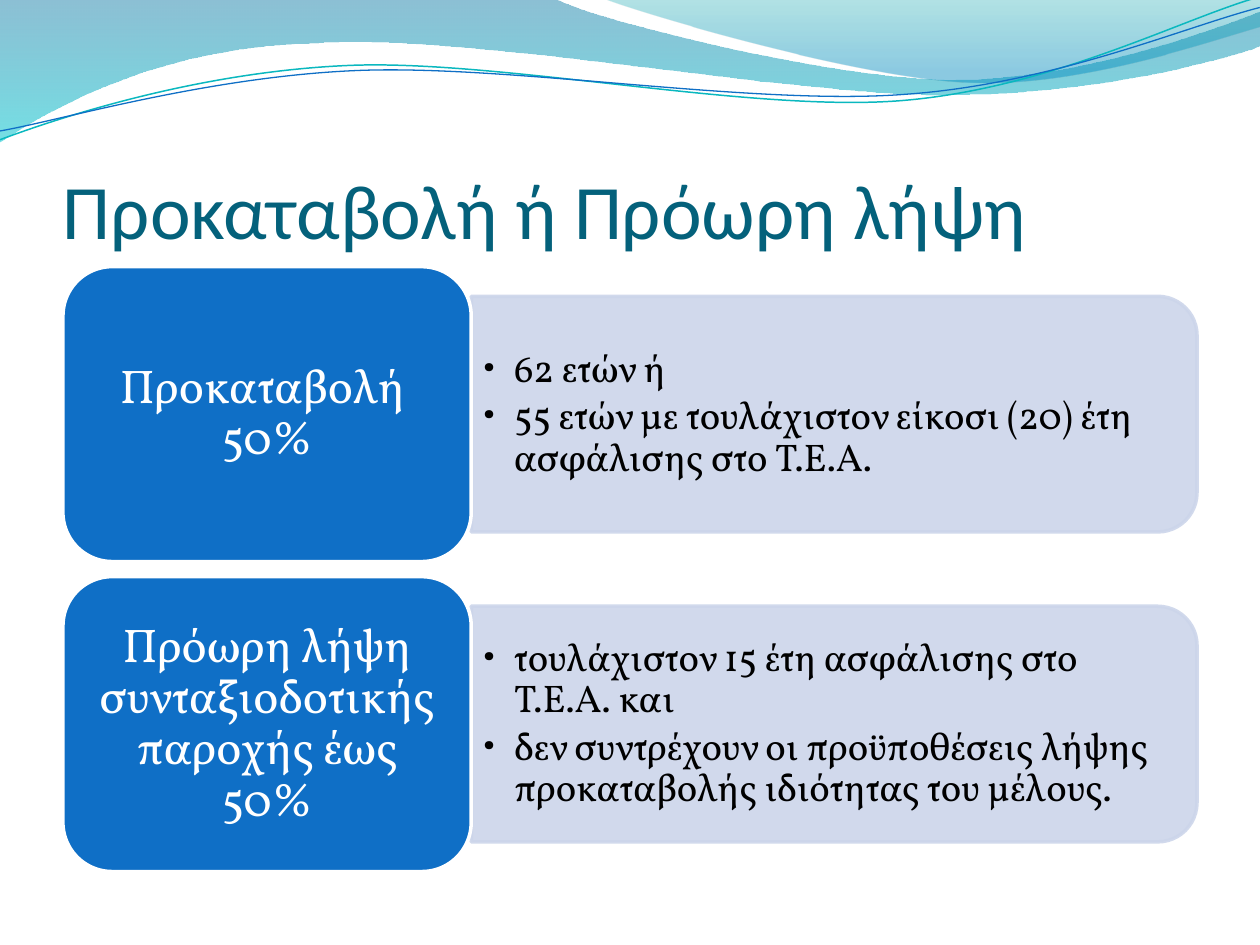
import math
import pptx
import pptx.util
import pptx.dml.color
import pptx.enum.shapes
import pptx.enum.text
import pptx.oxml
import pptx.oxml.ns
import lxml.etree

COLS, ROWS = 100, 75
CELL = pptx.util.Inches(0.1)
RGB = pptx.dml.color.RGBColor
SHAPE = pptx.enum.shapes.MSO_SHAPE
ALIGN = pptx.enum.text.PP_ALIGN
ANCHOR = pptx.enum.text.MSO_ANCHOR

BLUE = RGB(0x0F, 0x6F, 0xC6)
PALE = RGB(0xCC, 0xD5, 0xEA)
INK = RGB(0x04, 0x61, 0x7B)
TEAL = RGB(0x0A, 0xB8, 0xBF)
DEEP = RGB(0x00, 0x74, 0xA1)
AQUA = RGB(0x00, 0xC6, 0xCF)
SEA = RGB(0x00, 0xA1, 0xA9)
SKY = RGB(0x00, 0x8B, 0xBF)
WHITE = RGB(0xFF, 0xFF, 0xFF)
BLACK = RGB(0, 0, 0)

LEFT, TOP, WIDE, TALL = 5, 21.17, 32.4, 23.4
STEP = 24.6
BAND, DEPTH = 57.6, 18.7
TILT = 2.7

WAVE = [[(0, 0)], [(44, -0.1)],
        [(47.6, 1.7), (66.4, 6.3), (75.8, 6.3)],
        [(85.3, 6.3), (95.8, 2.6), (100, 0.9)], [(100.1, 3.6)],
        [(98.3, 4.4), (87, 7.6), (74.6, 7.5)],
        [(62.2, 7.5), (38.2, 2.8), (25.7, 3.4)],
        [(12.9, 3.6), (4.6, 8.3), (-0.1, 11.3)], [(0, 0)]]
CREST = [[(47.9, -0.1)],
         [(50.9, 1.1), (68.2, 6.2), (76.9, 6.5)],
         [(85.6, 6.9), (96.1, 3.2), (100, 2.1)],
         [(100, 0)], [(47.9, -0.1)]]
UPPER = [[(0, 11.1)],
         [(4.8, 9.3), (15.8, 5.7), (27.7, 5.2)],
         [(39.5, 4.7), (59.3, 8.9), (71.3, 8)],
         [(83.3, 7.1), (93.8, 1.5), (99.8, -0.2)]]
LOWER = [[(0, 10.4)],
         [(4.7, 9.6), (16.4, 6.1), (28.3, 5.6)],
         [(40.3, 5.1), (59.7, 8.4), (71.7, 7.5)],
         [(83.6, 6.7), (94.1, 2.1), (100, 0.6)]]

PAIRS = [
    ("Προκαταβολή  50%",
     ["62 ετών ή",
      "55 ετών με τουλάχιστον είκοσι (20) έτη ασφάλισης στο Τ.Ε.Α."]),
    ("Πρόωρη λήψη συνταξιοδοτικής παροχής έως 50%",
     ["τουλάχιστον 15 έτη ασφάλισης στο Τ.Ε.Α. και",
      "δεν συντρέχουν οι προϋποθέσεις λήψης προκαταβολής ιδιότητας του μέλους."]),
]


def cells(*nums):
    return [round(n * CELL) for n in nums]


def add_mark(node, name, **vals):
    mark = lxml.etree.SubElement(node, pptx.oxml.ns.qn(name))
    for key, val in vals.items():
        mark.set(key, str(val))


def bend(shape, curve):
    qn = pptx.oxml.ns.qn
    lines = list(shape._element.iter(qn("a:lnTo")))
    for step in curve[1:]:
        group, lines = lines[:len(step)], lines[len(step):]
        if len(step) == 3:
            arc = lxml.etree.Element(qn("a:cubicBezTo"))
            group[0].addprevious(arc)
            for line in group:
                arc.append(line[0])
                line.getparent().remove(line)


def draw(slide, curve, close):
    dots = [(x * 100, y * 100) for step in curve for x, y in step]
    pen = slide.shapes.build_freeform(*dots[0], scale=CELL / 100)
    pen.add_line_segments(dots[1:], close=close)
    shape = pen.convert_to_shape()
    shape.shadow.inherit = False
    bend(shape, curve)
    return shape


def turn(curve):
    dots = [dot for step in curve for dot in step]
    midx, midy = [(min(side) + max(side)) / 2 for side in zip(*dots)]
    cos, sin = math.cos(math.radians(TILT)), math.sin(math.radians(TILT))
    return [[(midx + (x - midx) * cos - (y - midy) * sin,
              midy + (x - midx) * sin + (y - midy) * cos) for x, y in step]
            for step in curve]


def fade(shape, *shares):
    tints = shape._element.spPr.iter(pptx.oxml.ns.qn("a:srgbClr"))
    for tint, share in zip(tints, shares):
        add_mark(tint, "a:alpha", val=share * 1000)


def add_wave(slide, curve, stops):
    shape = draw(slide, curve, True)
    shape.line.fill.background()
    shape.fill.gradient()
    shape.fill.gradient_angle = 270
    for stop, (place, tint, share) in zip(shape.fill.gradient_stops, stops):
        stop.position = place
        stop.color.rgb = tint
    fade(shape, *[share for place, tint, share in stops])


def add_curve(slide, curve, tint, width):
    shape = draw(slide, turn(curve), False)
    shape.rotation = 360 - TILT
    shape.fill.background()
    shape.line.color.rgb = tint
    shape.line.width = pptx.util.Pt(width)


def add_shape(slide, kind, area, tint, edge):
    shape = slide.shapes.add_shape(kind, *cells(*area))
    shape.shadow.inherit = False
    shape.fill.solid()
    shape.fill.fore_color.rgb = tint
    shape.line.color.rgb = edge
    shape.line.width = pptx.util.Pt(2)
    return shape


def set_frame(frame, anchor, pads):
    frame.word_wrap = True
    frame.vertical_anchor = anchor
    (frame.margin_left, frame.margin_top,
     frame.margin_right, frame.margin_bottom) = cells(*pads)


def set_font(font, size, name, tint):
    font.size = pptx.util.Pt(size)
    font.name = name
    font.color.rgb = tint


def add_run(para, text, *style):
    run = para.add_run()
    run.text = text
    set_font(run.font, *style)


def add_title(slide, text):
    frame = slide.shapes.add_textbox(*cells(LEFT, 7.7, 90, 12.5)).text_frame
    set_frame(frame, ANCHOR.BOTTOM, (0, 0.5, 0, 0))
    add_run(frame.paragraphs[0], text, 44, "Calibri", INK)


def add_band(slide, mid):
    area = (LEFT + WIDE + (BAND - DEPTH) / 2, mid - BAND / 2, DEPTH, BAND)
    shape = add_shape(slide, SHAPE.ROUND_2_SAME_RECTANGLE, area, PALE, PALE)
    shape.rotation = 90
    fade(shape, 90, 90)


def add_list(slide, mid, items):
    area = (LEFT + WIDE, mid - 8.45, 56.7, 16.9)
    style = (22, "Vollkorn", BLACK)
    frame = slide.shapes.add_textbox(*cells(*area)).text_frame
    set_frame(frame, ANCHOR.MIDDLE, (0.9, 0.5, 0.9, 0.5))
    for i, item in enumerate(items):
        para = frame.add_paragraph() if i else frame.paragraphs[0]
        para.level = 1
        para.line_spacing = 0.9
        para.space_after = pptx.util.Pt(3.4)
        props = para._p.get_or_add_pPr()
        indent, = cells(2.5)
        props.set("marL", str(indent))
        props.set("indent", str(-indent))
        add_mark(props, "a:buFont", typeface="Vollkorn")
        add_mark(props, "a:buChar", char="•")
        set_font(para.font, *style)
        add_run(para, item, *style)


def add_label(slide, top, text):
    area = (LEFT, top, WIDE, TALL)
    shape = add_shape(slide, SHAPE.ROUNDED_RECTANGLE, area, BLUE, WHITE)
    set_frame(shape.text_frame, ANCHOR.MIDDLE, (1.1, 0.6, 1.1, 0.6))
    para = shape.text_frame.paragraphs[0]
    para.alignment = ALIGN.CENTER
    para.line_spacing = 0.9
    add_run(para, text, 27, "Vollkorn", WHITE)


def main():
    deck = pptx.Presentation()
    deck.slide_width, deck.slide_height = cells(COLS, ROWS)
    slide = deck.slides.add_slide(deck.slide_layouts[6])
    add_wave(slide, WAVE, [(0, DEEP, 45), (1, AQUA, 55)])
    add_wave(slide, CREST, [(0, SEA, 30), (0.8, SKY, 45)])
    add_curve(slide, UPPER, TEAL, 0.85)
    add_curve(slide, LOWER, BLUE, 0.75)
    add_title(slide, "Προκαταβολή ή Πρόωρη λήψη")
    for i, (label, items) in enumerate(PAIRS):
        top = TOP + i * STEP
        mid = top + TALL / 2
        add_band(slide, mid)
        add_list(slide, mid, items)
        add_label(slide, top, label)
    deck.save("out.pptx")


if __name__ == "__main__":
    main()
